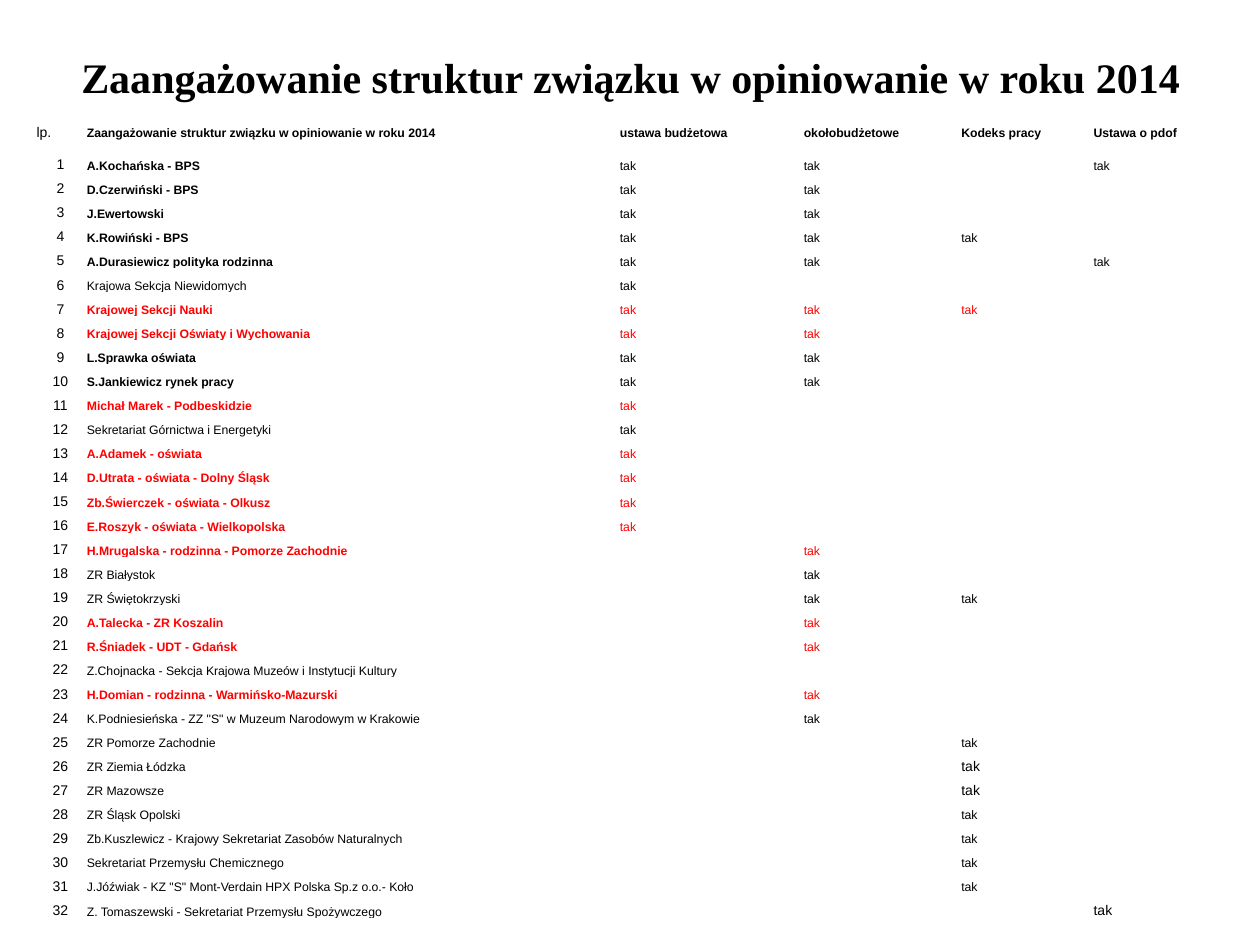
from pptx import Presentation
from pptx.dml.color import RGBColor
from pptx.enum.text import MSO_ANCHOR, PP_ALIGN
from pptx.util import Inches, Pt

BLACK, RED = "000000", "FF0000"
TITLE = "Zaangażowanie struktur związku w opiniowanie w roku 2014"
HEADERS = ["lp.", TITLE, "ustawa budżetowa", "okołobudżetowe", "Kodeks pracy", "Ustawa o pdof"]
COL_WIDTHS = [0.4, 4.23, 1.46, 1.25, 1.05, 1.22]
HEADER_H, ROW_H = 0.26, 0.191

# name, colour, bold, columns marked "tak"
ENTRIES = [
    ("A.Kochańska - BPS", BLACK, True, [2, 3, 5]),
    ("D.Czerwiński - BPS", BLACK, True, [2, 3]),
    ("J.Ewertowski", BLACK, True, [2, 3]),
    ("K.Rowiński - BPS", BLACK, True, [2, 3, 4]),
    ("A.Durasiewicz polityka rodzinna", BLACK, True, [2, 3, 5]),
    ("Krajowa Sekcja Niewidomych", BLACK, False, [2]),
    ("Krajowej Sekcji Nauki", RED, True, [2, 3, 4]),
    ("Krajowej Sekcji Oświaty i Wychowania", RED, True, [2, 3]),
    ("L.Sprawka oświata", BLACK, True, [2, 3]),
    ("S.Jankiewicz rynek pracy", BLACK, True, [2, 3]),
    ("Michał Marek - Podbeskidzie", RED, True, [2]),
    ("Sekretariat Górnictwa i Energetyki", BLACK, False, [2]),
    ("A.Adamek - oświata", RED, True, [2]),
    ("D.Utrata - oświata - Dolny Śląsk", RED, True, [2]),
    ("Zb.Świerczek - oświata - Olkusz", RED, True, [2]),
    ("E.Roszyk - oświata - Wielkopolska", RED, True, [2]),
    ("H.Mrugalska - rodzinna - Pomorze Zachodnie", RED, True, [3]),
    ("ZR Białystok", BLACK, False, [3]),
    ("ZR Świętokrzyski", BLACK, False, [3, 4]),
    ("A.Talecka - ZR Koszalin", RED, True, [3]),
    ("R.Śniadek - UDT - Gdańsk", RED, True, [3]),
    ("Z.Chojnacka - Sekcja Krajowa Muzeów i Instytucji Kultury", BLACK, False, []),
    ("H.Domian - rodzinna - Warmińsko-Mazurski", RED, True, [3]),
    ('K.Podniesieńska - ZZ "S" w Muzeum Narodowym w Krakowie', BLACK, False, [3]),
    ("ZR Pomorze Zachodnie", BLACK, False, [4]),
    ("ZR Ziemia Łódzka", BLACK, False, [4]),
    ("ZR Mazowsze", BLACK, False, [4]),
    ("ZR Śląsk Opolski", BLACK, False, [4]),
    ("Zb.Kuszlewicz - Krajowy Sekretariat Zasobów Naturalnych", BLACK, False, [4]),
    ("Sekretariat Przemysłu Chemicznego", BLACK, False, [4]),
    ('J.Jóźwiak - KZ "S" Mont-Verdain HPX Polska Sp.z o.o.- Koło', BLACK, False, [4]),
    ("Z. Tomaszewski - Sekretariat Przemysłu Spożywczego", BLACK, False, [5]),
]
LARGE_MARKS = {(26, 4), (27, 4), (32, 5)}


def add_text(p, text, color=BLACK, **font):
    r = p.add_run()
    r.text = text
    r.font.color.rgb = RGBColor.from_string(color)
    for name, value in font.items():
        setattr(r.font, name, value)


def fill_cell(row, col, text, size=7, bold=False, color=BLACK):
    cell = table.cell(row, col)
    cell.fill.background()
    fmt = {"margin_left": Inches(0.01), "margin_right": Inches(0.01),
           "margin_top": Inches(0.01), "margin_bottom": 0,
           "vertical_anchor": MSO_ANCHOR.BOTTOM if row else MSO_ANCHOR.MIDDLE}
    for name, value in fmt.items():
        setattr(cell, name, value)
    p = cell.text_frame.paragraphs[0]
    if row and col == 0:
        p.alignment = PP_ALIGN.CENTER
    if text:
        add_text(p, text, color, name="Arial", size=Pt(size), bold=bold)
    else:
        # Keeps an empty cell from stretching its row
        p._p.get_or_add_endParaRPr().set("sz", str(size * 100))


prs = Presentation()
prs.slide_width, prs.slide_height = Inches(10), Inches(7.5)
s = prs.slides.add_slide(prs.slide_layouts[6])

# Table frame
table = s.shapes.add_table(
    len(ENTRIES) + 1, len(HEADERS), Inches(0.28), Inches(0.92),
    Inches(sum(COL_WIDTHS)), Inches(HEADER_H + ROW_H * len(ENTRIES))).table
table.first_row = table.horz_banding = False
for column, width in zip(table.columns, COL_WIDTHS):
    column.width = Inches(width)
for i, row in enumerate(table.rows):
    row.height = Inches(ROW_H if i else HEADER_H)

# Header row
for col, header in enumerate(HEADERS):
    fill_cell(0, col, header, size=7 if col else 8, bold=col > 0)

# Numbered entries
for i, (name, color, bold, marks) in enumerate(ENTRIES, 1):
    fill_cell(i, 0, str(i), size=8)
    fill_cell(i, 1, name, bold=bold, color=color)
    for col in range(2, len(HEADERS)):
        fill_cell(i, col, "tak" if col in marks else "",
                  size=8 if (i, col) in LARGE_MARKS else 7, color=color)

# Title
tf = s.shapes.add_textbox(Inches(0.2), Inches(0.3), Inches(9.61), Inches(0.61)).text_frame
tf.word_wrap = True
tf.vertical_anchor = MSO_ANCHOR.MIDDLE
p = tf.paragraphs[0]
p.alignment = PP_ALIGN.CENTER
add_text(p, TITLE, name="Times New Roman", size=Pt(24), bold=True)

prs.save("out.pptx")
